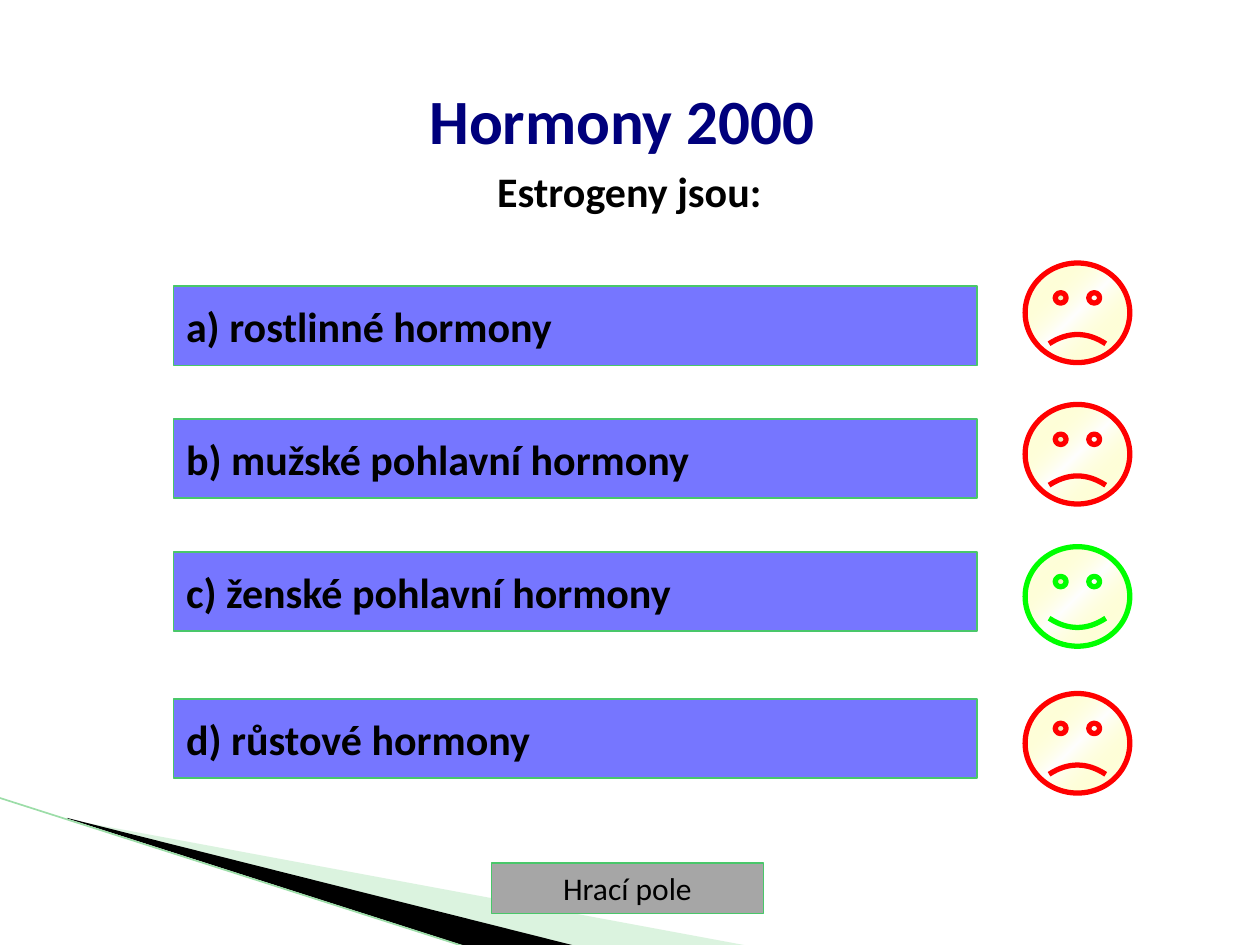
import pptx
import pptx.dml.color
import pptx.enum.shapes
import pptx.enum.text
import pptx.oxml
import pptx.oxml.ns
import pptx.util
import lxml.etree

Pt = pptx.util.Pt
SHAPE = pptx.enum.shapes.MSO_SHAPE
ALIGN = pptx.enum.text.PP_ALIGN
ANCHOR = pptx.enum.text.MSO_ANCHOR
qn = pptx.oxml.ns.qn

COLORS = {
    "black": "000000", "navy": "00007C", "answer": "7676FF",
    "button": "A6A6A6", "border": "49C76A", "wedge": "A5E1AF",
    "edge": "9CDDA8", "wrong": "FF0000", "right": "00FF00",
    "white": "FFFFFF", "yellow": "FFFF66",
}


def rgb(name):
    return pptx.dml.color.RGBColor.from_string(COLORS[name])


def add_button(left, top, width, height, fill, border_width, text, size, bold, align):
    button = page.shapes.add_shape(
        SHAPE.ACTION_BUTTON_CUSTOM, Pt(left), Pt(top), Pt(width), Pt(height))
    button.shadow.inherit = False
    button.fill.solid()
    button.fill.fore_color.rgb = rgb(fill)
    button.line.color.rgb = rgb("border")
    button.line.width = Pt(border_width)
    frame = button.text_frame
    frame.word_wrap = False
    frame.vertical_anchor = ANCHOR.MIDDLE
    para = frame.paragraphs[0]
    para.text = text
    para.alignment = align
    para.font.name = "Calibri"
    para.font.size = Pt(size)
    para.font.bold = bold
    para.font.color.rgb = rgb("black")


deck = pptx.Presentation()
deck.slide_width = Pt(720)
deck.slide_height = Pt(540)
page = deck.slides.add_slide(deck.slide_layouts[6])

# Corner wedges
wedges = [
    ("wedge", [(39.6, 468.4), (428.4, 540.6), (328.4, 540.6), (39.6, 468)]),
    ("black", [(38.3, 467.4), (329.2, 540.6), (267.8, 541.2), (38.7, 467.8)]),
]
for color, points in wedges:
    builder = page.shapes.build_freeform(
        Pt(points[0][0]), Pt(points[0][1]), scale=1.0)
    builder.add_line_segments([(Pt(x), Pt(y)) for x, y in points[1:]], close=True)
    wedge = builder.convert_to_shape()
    wedge.shadow.inherit = False
    wedge.fill.solid()
    wedge.fill.fore_color.rgb = rgb(color)
    wedge.line.fill.background()
    if color == "wedge":
        tint = wedge.fill._xPr.find(".//" + qn("a:srgbClr"))
        lxml.etree.SubElement(tint, qn("a:alpha")).set("val", "40000")

edge = page.shapes.add_connector(
    pptx.enum.shapes.MSO_CONNECTOR.STRAIGHT, Pt(-0.7), Pt(455.8), Pt(267.1), Pt(541.4))
edge.line.color.rgb = rgb("edge")
edge.line.width = Pt(0.95)
lxml.etree.SubElement(edge._element.spPr, qn("a:effectLst"))

# Button back to the game board
add_button(280.8, 493.2, 155.5, 28.8, "button", 0.75, "Hrací pole", 18, False, ALIGN.CENTER)

# Heading and question
box = page.shapes.add_textbox(Pt(19.4), Pt(43.2), Pt(680.4), Pt(56.9))
frame = box.text_frame
frame.word_wrap = True
headings = [("Hormony 2000 ", 36, "navy", 0), ("Estrogeny jsou:", 24, "black", 4.8)]
for index, (text, size, color, gap) in enumerate(headings):
    para = frame.add_paragraph() if index else frame.paragraphs[0]
    para.text = text
    para.alignment = ALIGN.CENTER
    para.space_before = Pt(gap)
    properties = para._p.get_or_add_pPr()
    properties.set("marL", str(Pt(27)))
    properties.set("indent", str(Pt(-27)))
    para.font.name = "Calibri"
    para.font.size = Pt(size)
    para.font.bold = True
    para.font.color.rgb = rgb(color)

# Answers, each with its face
answers = [
    ("a) rostlinné hormony", 163.6, 150.3, "wrong"),
    ("b) mužské pohlavní hormony", 239.4, 231.1, "wrong"),
    ("c) ženské pohlavní hormony", 315.4, 312.4, "right"),
    ("d) růstové hormony", 399.4, 396.3, "wrong"),
]
for text, button_top, face_top, verdict in answers:
    add_button(99.2, button_top, 459, 45.2, "answer", 1, text, 24, True, ALIGN.LEFT)

    face = page.shapes.add_shape(
        SHAPE.SMILEY_FACE, Pt(585.8), Pt(face_top), Pt(59.8), Pt(56.9))
    face.shadow.inherit = False
    face.adjustments[0] = 0.04653 if verdict == "right" else -0.04653
    face.line.color.rgb = rgb(verdict)
    face.line.width = Pt(3)
    face.fill.gradient()
    face.fill.gradient_angle = 315
    stops = face._element.spPr.find(".//" + qn("a:gsLst"))
    for stop in list(stops):
        stops.remove(stop)
    for position, color in [(0, "white"), (50, "yellow"), (100, "white")]:
        stop = lxml.etree.SubElement(stops, qn("a:gs"))
        stop.set("pos", str(position * 1000))
        tone = lxml.etree.SubElement(stop, qn("a:srgbClr"))
        tone.set("val", COLORS[color])
        if color == "yellow":
            lxml.etree.SubElement(tone, qn("a:alpha")).set("val", "0")

deck.save("out.pptx")
